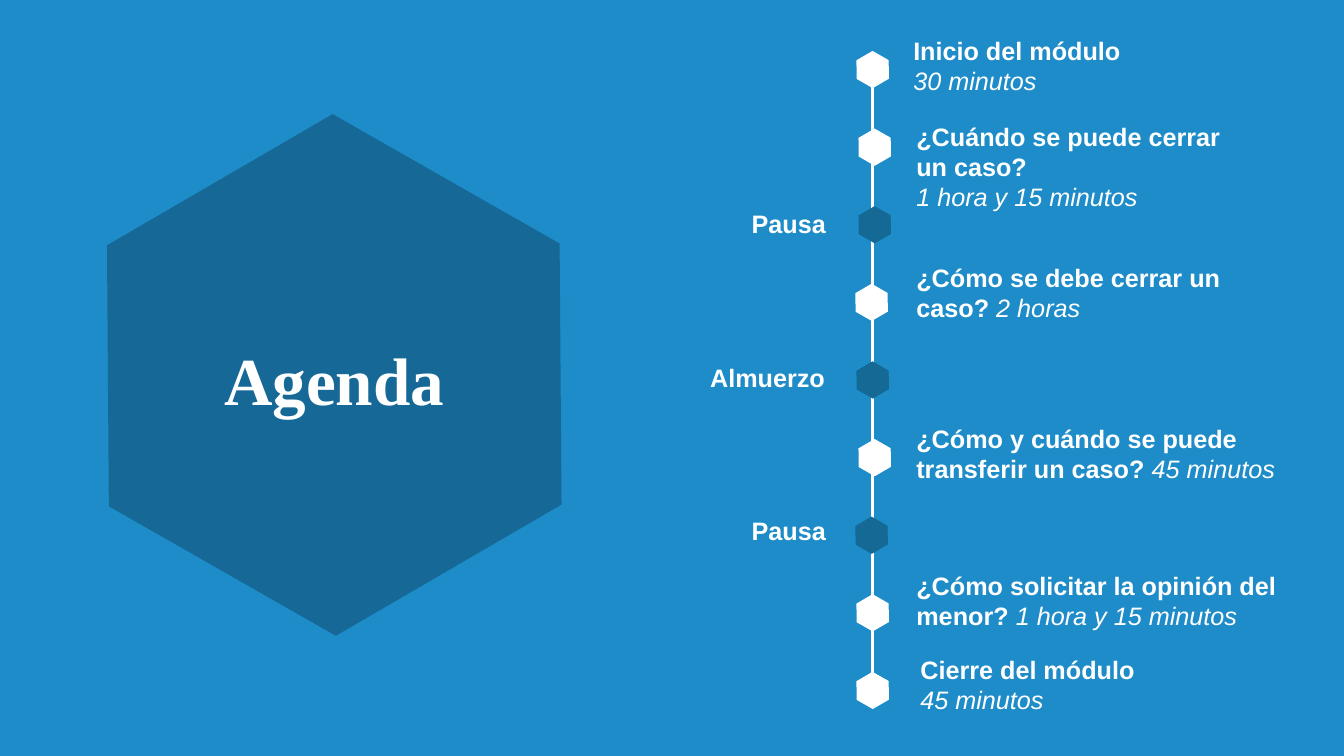
from dataclasses import dataclass

import pptx
import pptx.dml.color
import pptx.enum.shapes
import pptx.enum.text
import pptx.oxml.ns
import pptx.util
from lxml import etree

# Session: marker left, text box (left, top, width, height), topic, duration, duration on its own line
# Break: marker left, text box, label
STOPS = [
    (847, (896, 30, 283, 71), "Inicio del módulo", "30 minutos", True),
    (849, (899, 115, 353, 101), "¿Cuándo se puede cerrar un caso?", "1 hora y 15 minutos", True),
    (849, (681, 202, 148, 40), "Pausa"),
    (846, (899, 255, 359, 71), "¿Cómo se debe cerrar un caso? ", "2 horas", False),
    (847, (680, 355, 148, 40), "Almuerzo"),
    (849, (899, 415, 389, 71), "¿Cómo y cuándo se puede transferir un caso? ", "45 minutos", False),
    (846, (681, 506, 148, 40), "Pausa"),
    (847, (899, 561, 389, 71), "¿Cómo solicitar la opinión del menor? ", "1 hora y 15 minutos", False),
    (847, (903, 644, 353, 71), "Cierre del módulo", "45 minutos", True),
]
TITLE = "Agenda"
SLIDE_SIZE = (1333, 750)
TITLE_BOX = (112, 350, 439, 61)
BADGE_BOX = (72, 148, 519, 448)
TIMELINE_X, TIMELINE_TOP, TIMELINE_BOTTOM = 865, 62, 684
MARKER_TOP, MARKER_STEP, MARKER_SIZE = 53, 77, (37, 32)
HEXAGON_TILT = 29.7
HEXAGON_INSET = 0.29


@dataclass(frozen=True)
class Theme:
    background: str = "1D8CC8"
    badge: str = "166996"
    pause: str = "156995"
    light: str = "FFFFFF"
    title_font: str = "Times New Roman"
    body_font: str = "Arial"
    title_size: int = 48
    body_size: int = 18
    line_width: float = 2.25


THEME = Theme()


def px(*lengths):
    """Turn lengths at 100 px to the inch into EMU."""
    return [pptx.util.Emu(length * 9144) for length in lengths]


def color(code):
    return pptx.dml.color.RGBColor.from_string(code)


def add_hexagon(page, box, fill):
    hexagon = page.shapes.add_shape(pptx.enum.shapes.MSO_SHAPE.HEXAGON, *px(*box))
    hexagon.adjustments[0] = HEXAGON_INSET
    hexagon.rotation = HEXAGON_TILT
    hexagon.shadow.inherit = False
    hexagon.fill.solid()
    hexagon.fill.fore_color.rgb = color(fill)
    hexagon.line.fill.background()


def add_span(para, text, font=THEME.body_font, size=THEME.body_size, italic=False):
    """Add a run that is italic if asked and bold otherwise."""
    span = para.add_run()
    span.text = text
    span.font.name = font
    span.font.size = pptx.util.Pt(size)
    span.font.bold = not italic
    span.font.italic = italic
    span.font.color.rgb = color(THEME.light)


def add_label(page, box_px, topic, duration=None, own_line=False):
    box = page.shapes.add_textbox(*px(*box_px))
    frame = box.text_frame
    frame.word_wrap = True
    frame.auto_size = pptx.enum.text.MSO_AUTO_SIZE.SHAPE_TO_FIT_TEXT
    para = frame.paragraphs[0]
    add_span(para, topic)
    if duration is None:
        para.alignment = pptx.enum.text.PP_ALIGN.RIGHT
        return
    if own_line:
        para = frame.add_paragraph()
    add_span(para, duration, italic=True)


def add_timeline(page):
    ends = px(TIMELINE_X, TIMELINE_TOP, TIMELINE_X, TIMELINE_BOTTOM)
    line = page.shapes.add_connector(pptx.enum.shapes.MSO_CONNECTOR.STRAIGHT, *ends)
    line.line.color.rgb = color(THEME.light)
    line.line.width = pptx.util.Pt(THEME.line_width)
    etree.SubElement(line._element.spPr, pptx.oxml.ns.qn("a:effectLst"))

    for index, (left, box, *words) in enumerate(STOPS):
        is_break = len(words) == 1
        marker = (left, MARKER_TOP + index * MARKER_STEP, *MARKER_SIZE)
        add_hexagon(page, marker, THEME.pause if is_break else THEME.light)
        add_label(page, box, *words)


def add_title(page):
    title = page.shapes.title
    title.left, title.top, title.width, title.height = px(*TITLE_BOX)
    frame = title.text_frame
    frame.word_wrap = True
    frame.auto_size = pptx.enum.text.MSO_AUTO_SIZE.NONE
    frame.vertical_anchor = pptx.enum.text.MSO_ANCHOR.MIDDLE
    para = frame.paragraphs[0]
    para.alignment = pptx.enum.text.PP_ALIGN.CENTER
    para.line_spacing = 0.9
    add_span(para, TITLE, THEME.title_font, THEME.title_size)
    # Bring the title in front of the badge
    page.shapes._spTree.append(title._element)


def main():
    deck = pptx.Presentation()
    deck.slide_width, deck.slide_height = px(*SLIDE_SIZE)
    page = deck.slides.add_slide(deck.slide_layouts.get_by_name("Title Only"))
    page.background.fill.solid()
    page.background.fill.fore_color.rgb = color(THEME.background)
    add_hexagon(page, BADGE_BOX, THEME.badge)
    add_timeline(page)
    add_title(page)
    deck.save("out.pptx")


if __name__ == "__main__":
    main()
